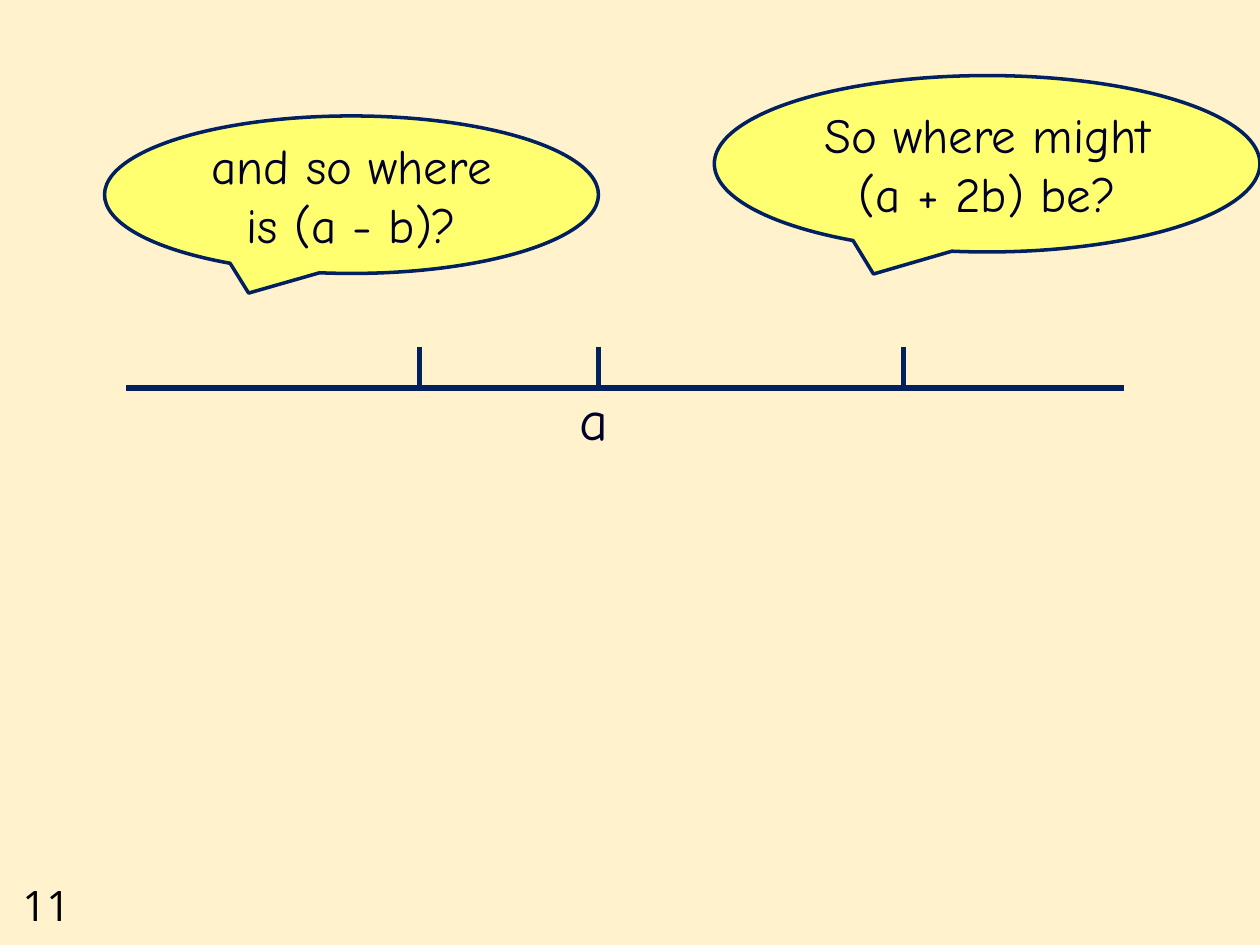
from pptx import Presentation
from pptx.dml.color import RGBColor
from pptx.enum.shapes import MSO_CONNECTOR, MSO_SHAPE
from pptx.enum.text import MSO_ANCHOR, PP_ALIGN
from pptx.oxml.ns import qn
from pptx.util import Inches, Pt
from lxml.etree import SubElement

CREAM = RGBColor(0xFF, 0xF2, 0xCC)
YELLOW = RGBColor(0xFF, 0xFF, 0x70)
NAVY = RGBColor(0x00, 0x20, 0x60)
INK = RGBColor(0x00, 0x00, 0x2A)
BLACK = RGBColor(0x00, 0x00, 0x00)

LINE_Y = 3.08
TICK_TOP = 2.75
TICKS = (3.33, 4.75, 7.17)


class NumberLineSlide:
    """Draws the parts of a number line slide in one shared style."""

    def __init__(self, slide):
        self.shapes = slide.shapes
        background = slide.background.fill
        background.solid()
        background.fore_color.rgb = CREAM

    def set_wording(self, frame, wording, size, font, color):
        frame.text = wording
        style = frame.paragraphs[0].runs[0].font
        style.size = Pt(size)
        style.name = font
        style.color.rgb = color

    def label(self, wording, left, top, width, height, size, font="Comic Neue", color=INK):
        frame = self.shapes.add_textbox(
            Inches(left), Inches(top), Inches(width), Inches(height)
        ).text_frame
        frame.word_wrap = True
        self.set_wording(frame, wording, size, font, color)

    def line(self, x1, y1, x2, y2):
        stroke = self.shapes.add_connector(
            MSO_CONNECTOR.STRAIGHT, Inches(x1), Inches(y1), Inches(x2), Inches(y2)
        )
        stroke.line.color.rgb = NAVY
        stroke.line.width = Pt(3)
        SubElement(stroke._element.spPr, qn("a:effectLst"))

    def callout(self, question, left, top, width, height):
        bubble = self.shapes.add_shape(
            MSO_SHAPE.OVAL_CALLOUT, Inches(left), Inches(top), Inches(width), Inches(height)
        )
        bubble.shadow.inherit = False
        bubble.fill.solid()
        bubble.fill.fore_color.rgb = YELLOW
        bubble.line.color.rgb = NAVY
        bubble.line.width = Pt(2)
        frame = bubble.text_frame
        frame.word_wrap = True
        frame.vertical_anchor = MSO_ANCHOR.MIDDLE
        self.set_wording(frame, question, 28, "Comic Neue", INK)
        frame.paragraphs[0].alignment = PP_ALIGN.CENTER


def main():
    deck = Presentation()
    deck.slide_width = Inches(10)
    deck.slide_height = Inches(7.5)
    page = NumberLineSlide(deck.slides.add_slide(deck.slide_layouts[6]))

    page.label("11", 0.08, 6.93, 0.75, 0.5, 24, "Open Sans", BLACK)
    page.line(1, LINE_Y, 8.92, LINE_Y)
    for x in TICKS:
        page.line(x, TICK_TOP, x, LINE_Y)
    page.label("a", 4.5, 3, 0.75, 0.64, 32)
    page.callout("So where might (a + 2b) be?", 5.67, 0.6, 4.33, 1.4)
    page.callout("and so where is (a - b)?", 0.83, 0.92, 3.92, 1.25)

    deck.save("out.pptx")


if __name__ == "__main__":
    main()
